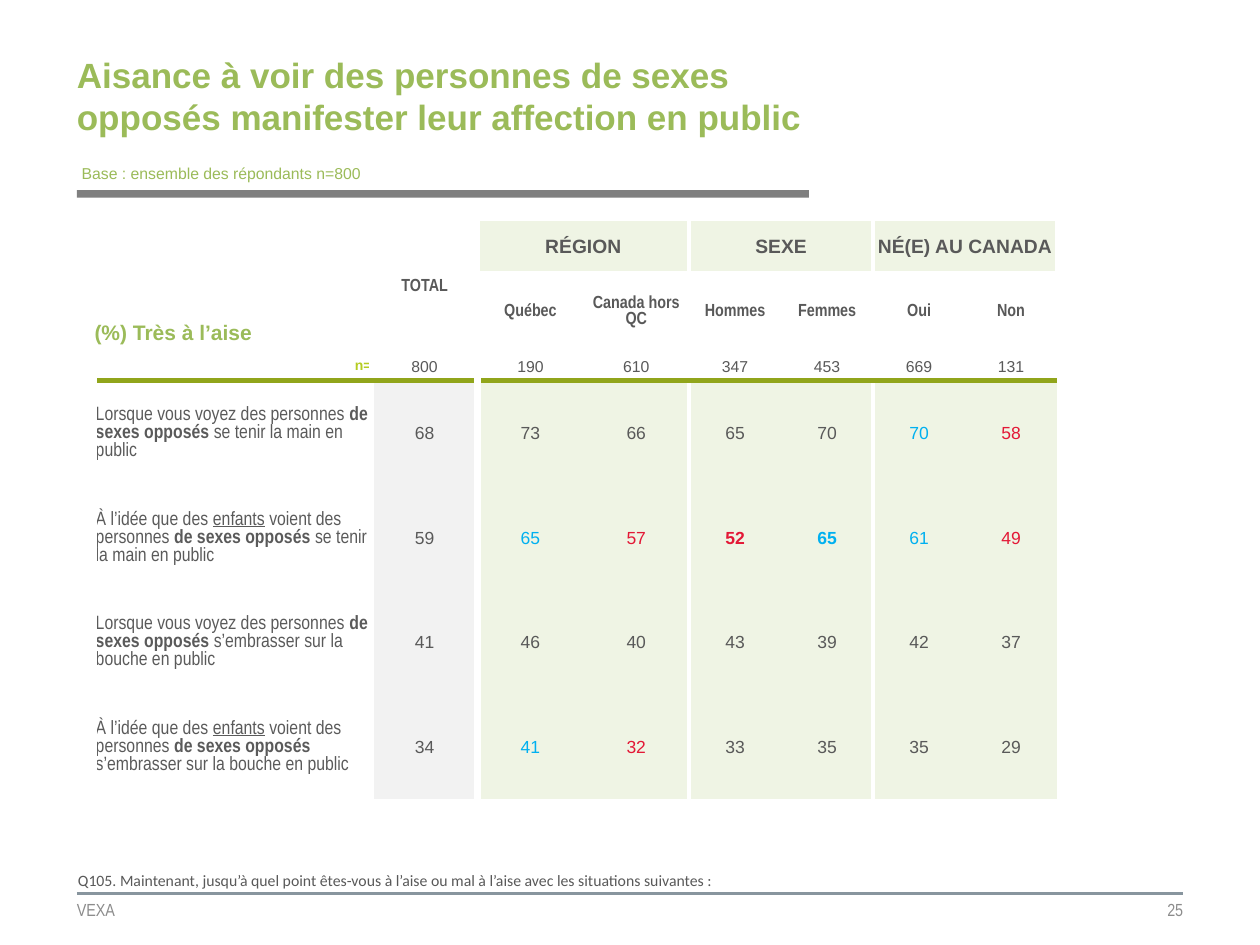
from lxml.etree import SubElement
from pptx import Presentation
from pptx.dml.color import RGBColor
from pptx.enum.shapes import MSO_CONNECTOR, MSO_SHAPE
from pptx.enum.text import MSO_ANCHOR, MSO_AUTO_SIZE, PP_ALIGN
from pptx.oxml.ns import qn
from pptx.util import Inches, Pt

COLORS = {
    "title": "9BBB59", "text": "595959", "statement": "5A5A5A", "footer": "8C8C8C",
    "bar": "7F7F7F", "rule": "88959E", "base": "B5CC22", "white": "FFFFFF",
    "green": "91A51B", "tint": "EFF4E4", "total": "F2F2F2",
    "high": "00B0F0", "low": "E31836",
}


def write(frame, runs, size, name, color, align=PP_ALIGN.LEFT, anchor=MSO_ANCHOR.MIDDLE,
          margins=(0, 0, 0, 0), **style):
    sides = ("margin_left", "margin_top", "margin_right", "margin_bottom")
    for side, margin in zip(sides, margins):
        setattr(frame, side, Inches(margin))
    frame.vertical_anchor = anchor
    text_frame = getattr(frame, "text_frame", frame)
    text_frame.word_wrap = True
    paragraph = text_frame.paragraphs[0]
    paragraph.alignment = align
    for text, extra in runs:
        run = paragraph.add_run()
        run.text = text
        run.font.color.rgb = RGBColor.from_string(COLORS[color])
        font_format = {"size": Pt(size), "name": name, "bold": False, **style, **extra}
        for attribute, value in font_format.items():
            setattr(run.font, attribute, value)
    return paragraph


def set_borders(cell, borders):
    properties = cell._tc.get_or_add_tcPr()
    for side in "LRTB":
        color, width = borders.get(side, (None, 0))
        line = SubElement(properties, qn(f"a:ln{side}"), w=str(Pt(width)))
        if color:
            fill = SubElement(line, qn("a:solidFill"))
            SubElement(fill, qn("a:srgbClr"), val=COLORS[color])
        else:
            SubElement(line, qn("a:noFill"))


presentation = Presentation()
presentation.slide_width, presentation.slide_height = Inches(10), Inches(7.5)
slide = presentation.slides.add_slide(presentation.slide_layouts[5])

rule = slide.shapes.add_connector(
    MSO_CONNECTOR.STRAIGHT, Inches(0.61), Inches(7.09), Inches(9.39), Inches(7.09))
rule.line.color.rgb = RGBColor.from_string(COLORS["rule"])
rule.line.width = Pt(1.5)
SubElement(rule._element.spPr, qn("a:effectLst"))

bar = slide.shapes.add_shape(
    MSO_SHAPE.RECTANGLE, Inches(0.61), Inches(1.51), Inches(5.81), Inches(0.06))
bar.shadow.inherit = False
bar.fill.solid()
bar.fill.fore_color.rgb = RGBColor.from_string(COLORS["bar"])
bar.line.fill.background()

title = slide.shapes.title
title.left, title.top, title.width, title.height = map(Inches, (0.61, 0.41, 5.81, 0.69))
title.text_frame.auto_size = MSO_AUTO_SIZE.NONE
write(title.text_frame,
      [("Aisance à voir des personnes de sexes opposés manifester leur affection en public", {})],
      20, "Arial", "title", bold=True)

padding = (0.1, 0.05, 0.1, 0.05)
text_boxes = [
    ((0.61, 7.09, 2.8, 0.26), "VEXA", 10, "Arial Narrow", "footer", {}),
    ((6.55, 7.09, 2.84, 0.26), "25", 10, "Arial Narrow", "footer", {"align": PP_ALIGN.RIGHT}),
    ((0.52, 6.86, 8.81, 0.25),
     "Q105. Maintenant, jusqu’à quel point êtes-vous à l’aise ou mal à l’aise "
     "avec les situations suivantes :", 9, "Calibri", "text", {"margins": padding}),
    ((0.55, 1.25, 2.48, 0.25), "Base : ensemble des répondants n=800", 9, "Arial", "title",
     {"margins": padding}),
]
for position, text, size, name, color, options in text_boxes:
    text_box = slide.shapes.add_textbox(*map(Inches, position))
    write(text_box.text_frame, [(text, {})], size, name, color, **options)

column_widths = [2.2] + [0.84] * 3 + [0.73] * 4
row_heights = [0.31, 0.64, 0.23] + [0.83] * 4
table = slide.shapes.add_table(
    len(row_heights), len(column_widths), Inches(0.75), Inches(1.75),
    Inches(sum(column_widths)), Inches(sum(row_heights))).table
table.first_row = table.horz_banding = False
for column, width in zip(table.columns, column_widths):
    column.width = Inches(width)
for row, height in zip(table.rows, row_heights):
    row.height = Inches(height)

first_body_row = 3
for row in range(len(row_heights)):
    for column in range(len(column_widths)):
        in_body = row >= first_body_row
        borders = {}
        if row == 0 or column in (2, 4, 6) or (column == 0 and in_body):
            borders["L"] = ("white", 4.5 if in_body and column == 2 else 3)
        if row == 0 or column in (0, 1, 3, 5):
            borders["R"] = ("white", 4.5 if in_body and column == 1 else 3)
        if row == first_body_row:
            borders["T"] = ("green", 3)
        if row == first_body_row - 1:
            borders["B"] = ("green", 3)
        cell = table.cell(row, column)
        set_borders(cell, borders)
        if column >= 2 and (in_body or row == 0):
            fill_color = "tint"
        else:
            fill_color = "total" if in_body and column == 1 else None
        if fill_color:
            cell.fill.solid()
            cell.fill.fore_color.rgb = RGBColor.from_string(COLORS[fill_color])
        else:
            cell.fill.background()

cell_margins = (0.01, 0.01, 0.01, 0)
centered = {"align": PP_ALIGN.CENTER, "margins": cell_margins}
label_margins = (0, 0.05, 0, 0.05)

table.cell(0, 1).merge(table.cell(1, 1))
write(table.cell(0, 1), [("TOTAL", {})], 10, "Arial Narrow", "text", bold=True, **centered)
for column, group in zip((2, 4, 6), ("RÉGION", "SEXE", "NÉ(E) AU CANADA")):
    table.cell(0, column).merge(table.cell(0, column + 1))
    write(table.cell(0, column), [(group, {})], 11, "Arial", "text", bold=True, **centered)
segments = ["Québec", "Canada hors QC", "Hommes", "Femmes", "Oui", "Non"]
for column, segment in enumerate(segments, 2):
    write(table.cell(1, column), [(segment, {})], 10, "Arial Narrow", "text", bold=True, **centered)
for column, count in enumerate([800, 190, 610, 347, 453, 669, 131], 1):
    write(table.cell(2, column), [(str(count), {})], 9, "Arial", "text", **centered)

paragraph = write(table.cell(1, 0), [("(%) Très à l’aise", {})], 12, "Arial", "title",
                  anchor=MSO_ANCHOR.BOTTOM, margins=label_margins, bold=True)
paragraph.line_spacing = 0.95
paragraph = write(table.cell(2, 0), [("n=", {})], 8, "Arial", "base",
                  align=PP_ALIGN.RIGHT, margins=label_margins, bold=True)
paragraph.line_spacing = 0.95

seeing = [("Lorsque vous voyez des personnes ", {})]
children = [("À l’idée que des ", {}), ("enfants", {"underline": True}),
            (" voient des personnes ", {})]
couple = ("de sexes opposés ", {"bold": True})
holding_hands = ("se tenir la main en public", {})
kissing = ("s’embrasser sur la bouche en public", {})
body = [
    (seeing, holding_hands, [68, 73, 66, 65, 70, 70, 58]),
    (children, holding_hands, [59, 65, 57, 52, 65, 61, 49]),
    (seeing, kissing, [41, 46, 40, 43, 39, 42, 37]),
    (children, kissing, [34, 41, 32, 33, 35, 35, 29]),
]
significant = {
    "high": [(3, 6), (4, 2), (4, 5), (4, 6), (6, 2)],
    "low": [(3, 7), (4, 3), (4, 4), (4, 7), (6, 3)],
}
value_colors = {place: color for color, places in significant.items() for place in places}
bold_values = [(4, 4), (4, 5)]
for row, (opening, action, values) in enumerate(body, first_body_row):
    write(table.cell(row, 0), [*opening, couple, action], 11, "Arial Narrow", "statement",
          margins=cell_margins)
    for column, value in enumerate(values, 1):
        place = (row, column)
        write(table.cell(row, column), [(str(value), {})], 10, "Arial",
              value_colors.get(place, "text"), bold=place in bold_values, **centered)

presentation.save("out.pptx")
